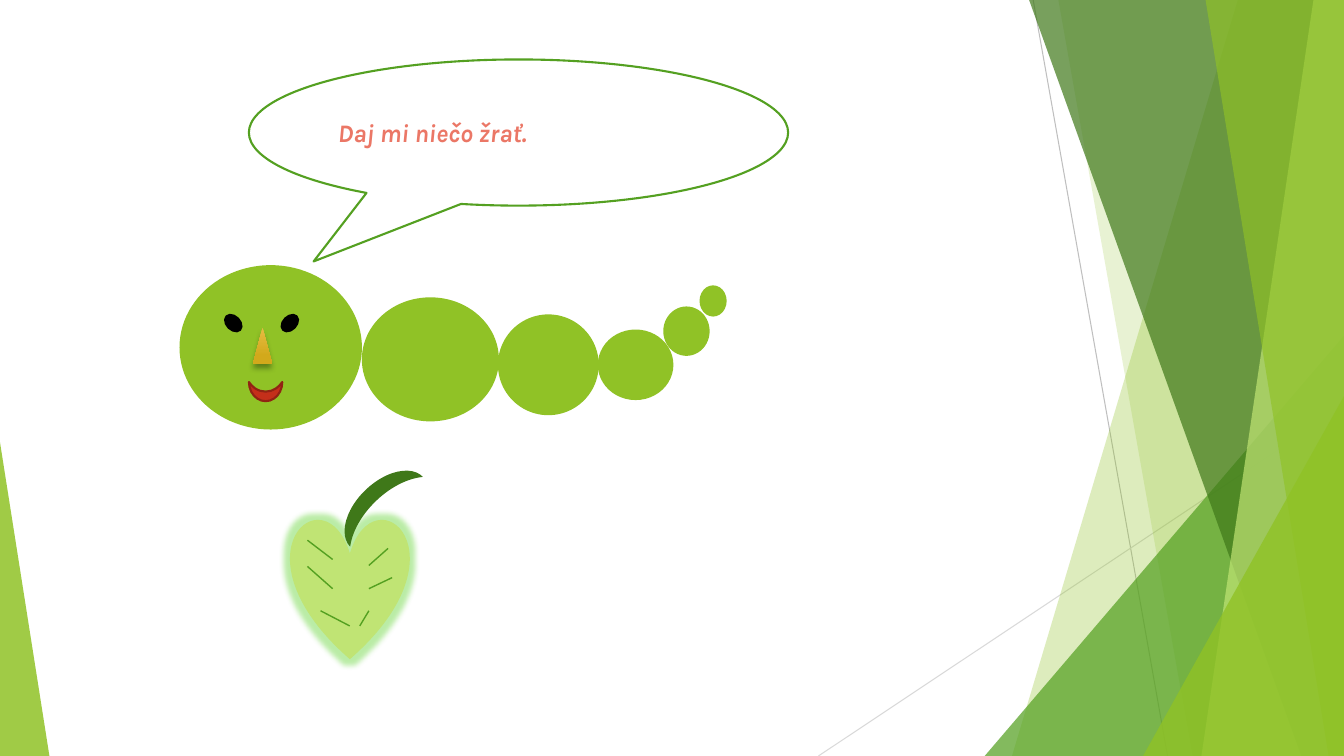
from pptx import Presentation, util as u
from pptx.dml.color import RGBColor
from pptx.enum import shapes, text
from pptx.oxml import parse_xml
from pptx.oxml.ns import nsdecls, qn

# Content: all lengths in points
WIDTH, HEIGHT = 960, 540
GREEN, LEAF, DARK, PALE = "90C226", "54A021", "3F7819", "C0E474"
SPEECH = "Daj mi niečo žrať."
SPEECH_FONT = {"name": "Karla", "size": u.Pt(18), "bold": True, "italic": True}

# from x, from y, to x, to y, colour
THIN_LINES = [(738, 0, 834, 540, "BFBFBF"), (960, 290, 584.6, 540, "D9D9D9")]
# Bands reach the right edge: top left x, bottom left x, colour, opacity
# Triangles: left, top, width, tip position, colour, opacity
DECOR = [
    ("band", 884.2, 722.9, GREEN, 30),
    ("band", 756, 851.8, GREEN, 20),
    ("triangle", 703.4, 239.8, 256.6, 1, LEAF, 72),
    ("band", 735.1, 929.5, DARK, 70),
    ("band", 938.2, 858.2, PALE, 70),
    ("band", 861.1, 949, GREEN, 65),
    ("triangle", 816.5, 283, 143.5, 1, GREEN, 80),
    ("triangle", 0, 316, 35.3, 0, GREEN, 85),
]
# left, top, width, height
BODY = [
    (128.2, 189.4, 130.3, 117.4), (258.5, 212.4, 97.9, 88.6),
    (355.7, 224.6, 72, 72), (427, 235.4, 54, 50.4),
    (473.8, 218.9, 33.1, 35.3), (499.7, 203.8, 19.4, 22.3),
]
EYES = [(159.8, 45), (200.2, -45)]  # left, rotation
NOSE = (180.7, 234, 13.7, 25.9)
NOSE_STOPS = [("E7BC43", 0), ("D2A91B", 0.78)]
MOUTH = (182.9, 267.8, 13.7, 23.8)
BUBBLE = (177.8, 42.5, 385.2, 104.4)
HEART = (207.4, 370.1, 85, 100.8)
STEM = (257.8, 321.8, 21.6, 72)
VEINS = [
    (219.6, 385.9, 237.6, 399.6), (219.6, 404.6, 237.6, 420.5),
    (229, 436.3, 249.8, 447.1), (277.2, 391.7, 263.5, 403.9),
    (280.1, 412.6, 263.5, 420.5), (263.5, 436.3, 257, 447.1),
]

deck = Presentation()
deck.slide_width, deck.slide_height = u.Pt(WIDTH), u.Pt(HEIGHT)
page = deck.slides.add_slide(deck.slide_layouts[6])
KIND = shapes.MSO_SHAPE


def color(code):
    return RGBColor.from_string(code)


def paint(shape, fill, opacity=100, line=None):
    shape.shadow.inherit = False
    shape.fill.solid()
    shape.fill.fore_color.rgb = color(fill)
    if opacity < 100:
        tint = shape.fill._xPr.find(qn("a:solidFill"))[0]
        tint.append(parse_xml(f'<a:alpha {nsdecls("a")} val="{opacity * 1000}"/>'))
    if line:
        shape.line.color.rgb = color(line)
        shape.line.width = u.Pt(1.5)
    else:
        shape.line.fill.background()
    return shape


def add(kind, place, fill, opacity=100, line=None, rotation=0, adjust=()):
    shape = page.shapes.add_shape(kind, *map(u.Pt, place))
    shape.rotation = rotation
    for index, value in enumerate(adjust):
        shape.adjustments[index] = value
    return paint(shape, fill, opacity, line)


def add_line(x1, y1, x2, y2, code, width):
    line = page.shapes.add_connector(
        shapes.MSO_CONNECTOR.STRAIGHT, *map(u.Pt, (x1, y1, x2, y2)))
    line.line.color.rgb = color(code)
    line.line.width = u.Pt(width)
    line._element.spPr.append(parse_xml(f'<a:effectLst {nsdecls("a")}/>'))


def add_effect(shape, tag, attributes, code, opacity):
    shape._element.spPr.find(qn("a:effectLst")).append(parse_xml(
        f'<a:{tag} {nsdecls("a")} {attributes}><a:srgbClr val="{code}">'
        f'<a:alpha val="{opacity * 1000}"/></a:srgbClr></a:{tag}>'))


# Green background bands
for *ends, code in THIN_LINES:
    add_line(*ends, code, 0.75)
for kind, *values in DECOR:
    if kind == "band":
        top_x, bottom_x, code, opacity = values
        outline = page.shapes.build_freeform(u.Pt(top_x), u.Pt(0), scale=1.0)
        corners = [(WIDTH, 0), (WIDTH, HEIGHT), (bottom_x, HEIGHT)]
        outline.add_line_segments([(u.Pt(x), u.Pt(y)) for x, y in corners], close=True)
        paint(outline.convert_to_shape(), code, opacity)
    else:
        left, top, width, tip, code, opacity = values
        add(KIND.ISOSCELES_TRIANGLE, (left, top, width, HEIGHT - top),
            code, opacity, adjust=[tip])

# Caterpillar
for place in BODY:
    add(KIND.OVAL, place, GREEN)
for left, turn in EYES:
    add(KIND.OVAL, (left, 226.1, 13.7, 9.4), "000000", line="000000", rotation=turn)
nose = add(KIND.ISOSCELES_TRIANGLE, NOSE, NOSE_STOPS[0][0])
nose.fill.gradient()
nose.fill.gradient_angle = 270
for stop, (code, position) in zip(nose.fill.gradient_stops, NOSE_STOPS):
    stop.color.rgb = color(code)
    stop.position = position
add_effect(nose, "outerShdw",
           f'blurRad="{u.Pt(4)}" dist="{u.Pt(3)}" dir="5400000" rotWithShape="0"',
           "000000", 35)
add(KIND.MOON, MOUTH, "C42F1A", line="912313", rotation=270)

# Speech bubble
bubble = add(KIND.OVAL_CALLOUT, BUBBLE, "FFFFFF", line=LEAF, adjust=[-0.38, 0.882])
frame = bubble.text_frame
frame.word_wrap = True
frame.vertical_anchor = text.MSO_ANCHOR.MIDDLE
para = frame.paragraphs[0]
para.alignment = text.PP_ALIGN.LEFT
span = para.add_run()
span.text = SPEECH
for name, value in SPEECH_FONT.items():
    setattr(span.font, name, value)
span.font.color.rgb = color("EB7766")

# Leaf
heart = add(KIND.HEART, HEART, PALE)
add_effect(heart, "glow", f'rad="{u.Pt(8)}"', "54D121", 40)
add(KIND.MOON, STEM, DARK, rotation=46.2)
for ends in VEINS:
    add_line(*ends, LEAF, 1)

deck.save("out.pptx")
